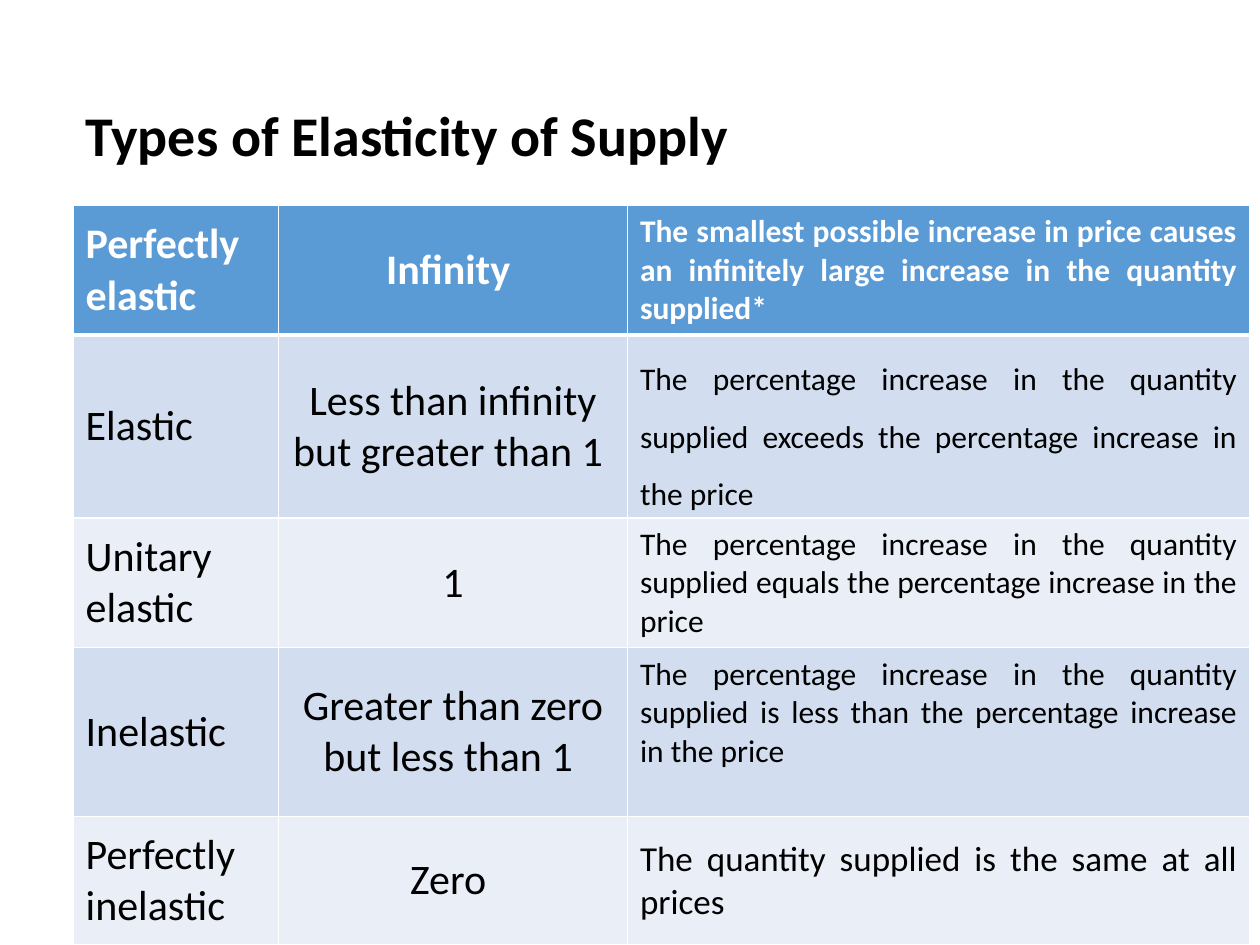
from lxml.etree import SubElement
from pptx import Presentation
from pptx.dml.color import RGBColor
from pptx.enum.text import MSO_ANCHOR, MSO_AUTO_SIZE, PP_ALIGN
from pptx.oxml.ns import qn
from pptx.util import Inches, Pt

COLOURS = {"ink": "000000", "paper": "FFFFFF", "header": "5B9BD5",
           "band_dark": "D2DEEF", "band_light": "EAEFF7"}
WIDTH, HEIGHT = 10, 7.5
LEFT = 0.58
COLUMNS = [1.63, 2.77, 4.94]
ROWS = [1.03, 1.45, 1.03, 1.34, 1.02]

# Type, coefficient, meaning, and the format of the meaning
ELASTICITIES = [
    ("Perfectly elastic ", "Infinity ",
     "The smallest possible increase in price causes an infinitely large "
     "increase in the quantity supplied* ", {}),
    ("Elastic", "Less than infinity but greater than 1 ",
     "The percentage increase in the quantity supplied exceeds the "
     "percentage increase in the price", {"line_spacing": 1.5}),
    ("Unitary elastic ", "1",
     "The percentage increase in the quantity supplied equals the "
     "percentage increase in the price ", {}),
    ("Inelastic", "Greater than zero but less than 1 ",
     "The percentage increase in the quantity supplied is less than the "
     "percentage increase in the price ", {"margin_bottom": 0.35}),
    ("Perfectly inelastic", "Zero ",
     "The quantity supplied is the same at all prices", {"size": 20}),
]


class SlideBuilder:
    font = "Calibri"

    def __init__(self):
        self.deck = Presentation()
        self.deck.slide_width = Inches(WIDTH)
        self.deck.slide_height = Inches(HEIGHT)
        self.page = self.deck.slides.add_slide(self.deck.slide_layouts[6])

    def add_text(self, frame, text, size, colour, bold=False,
                 align=PP_ALIGN.JUSTIFY, line_spacing=None):
        para = frame.paragraphs[0]
        para.alignment = align
        para.line_spacing = line_spacing
        span = para.add_run()
        span.text = text
        formats = {"name": self.font, "size": Pt(size), "bold": bold}
        for name, value in formats.items():
            setattr(span.font, name, value)
        span.font.color.rgb = RGBColor.from_string(COLOURS[colour])

    def title(self, text, left, top, width, height):
        box = self.page.shapes.add_textbox(
            *map(Inches, (left, top, width, height)))
        box.text_frame.word_wrap = True
        box.text_frame.auto_size = MSO_AUTO_SIZE.SHAPE_TO_FIT_TEXT
        self.add_text(box.text_frame, text, 32, "ink", bold=True)

    def borders(self, cell, widths):
        properties = cell._tc.get_or_add_tcPr()
        for position, (side, width) in enumerate(widths.items()):
            line = SubElement(properties, qn(f"a:{side}"), w=str(Pt(width)))
            fill = SubElement(line, qn("a:solidFill"))
            SubElement(fill, qn("a:srgbClr"), val=COLOURS["paper"])
            properties.remove(line)
            properties.insert(position, line)  # borders precede the fill

    def cell(self, cell, text, fill, size, margin_bottom=0.05, **style):
        cell.vertical_anchor = MSO_ANCHOR.MIDDLE
        cell.margin_bottom = Inches(margin_bottom)
        cell.fill.solid()
        cell.fill.fore_color.rgb = RGBColor.from_string(COLOURS[fill])
        self.add_text(cell.text_frame, text, size, **style)

    def table(self, records, left, top, columns, rows):
        table = self.page.shapes.add_table(
            len(rows), len(columns),
            *map(Inches, (left, top, sum(columns), sum(rows)))).table
        for column, width in zip(table.columns, columns):
            column.width = Inches(width)
        for row, height in zip(table.rows, rows):
            row.height = Inches(height)

        for index, (kind, coefficient, meaning, extra) in enumerate(records):
            header = index == 0
            fill = "header" if header else (
                "band_dark" if index % 2 else "band_light")
            base = {"fill": fill, "size": 24, "bold": header,
                    "colour": "paper" if header else "ink"}
            contents = [
                (kind, {}),
                (coefficient, {"align": PP_ALIGN.CENTER}),
                (meaning, {"size": 18, **extra}),
            ]
            widths = {"lnL": 1, "lnR": 1, "lnT": 3 if index == 1 else 1,
                      "lnB": 3 if header else 1}
            for column, (text, style) in enumerate(contents):
                cell = table.cell(index, column)
                self.cell(cell, text, **{**base, **style})
                self.borders(cell, widths)


def main():
    builder = SlideBuilder()
    builder.title("Types of Elasticity of Supply", LEFT, HEIGHT * 0.1, 5.5, 0.64)
    builder.table(ELASTICITIES, LEFT, HEIGHT - sum(ROWS), COLUMNS, ROWS)
    builder.deck.save("out.pptx")


if __name__ == "__main__":
    main()
